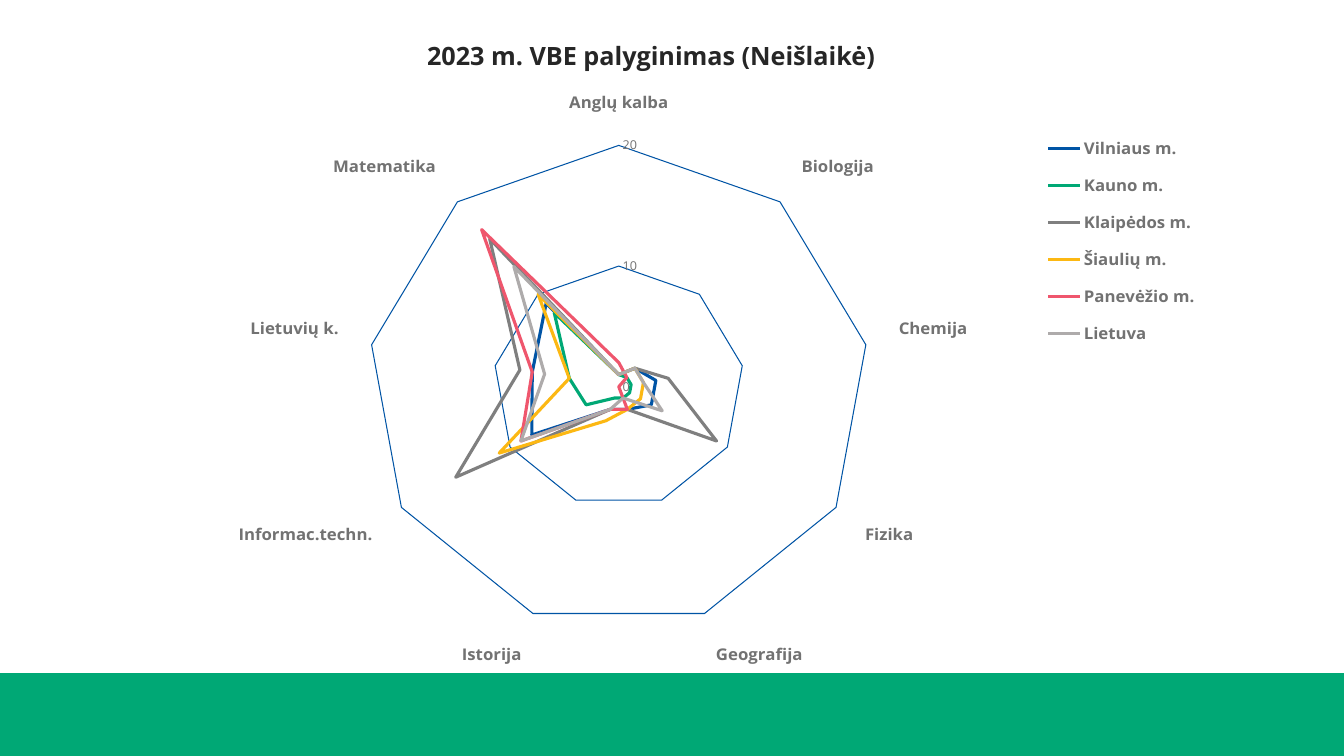
import lxml.etree
import pptx
import pptx.chart.data
import pptx.dml.color
import pptx.enum.chart
import pptx.enum.shapes
import pptx.enum.text
import pptx.util

PX = 914400 / 100.8
FONT = "Open Sans"
CHART_NS = "http://schemas.openxmlformats.org/drawingml/2006/chart"

SUBJECTS = ["Anglų kalba", "Biologija", "Chemija", "Fizika", "Geografija",
            "Istorija", "Informac.techn.", "Lietuvių k.", "Matematika"]
CITIES = [
    ("Vilniaus m.", "0054A5", (1, 2, 3, 3, 2, 2, 8, 7, 9)),
    ("Kauno m.", "00A875", (1, 1, 1, 1, 1, 1, 3, 4, 8)),
    ("Klaipėdos m.", "7F7F7F", (1, 2, 4, 9, 2, 2, 15, 8, 16)),
    ("Šiaulių m.", "FCB813", (1, 2, 2, 2, 2, 3, 11, 4, 10)),
    ("Panevėžio m.", "EF566D", (2, 1, 0, 0, 2, 2, 9, 7, 17)),
    ("Lietuva", "AEABAB", (1, 2, 2, 4, 1, 2, 9, 6, 13)),
]


def px(length):
    return pptx.util.Emu(round(length * PX))


def color(hex_code):
    return pptx.dml.color.RGBColor.from_string(hex_code)


def set_values(target, values):
    for name, value in values.items():
        setattr(target, name, value)


def format_font(font, size, hex_code, bold):
    set_values(font, {"name": FONT, "size": pptx.util.Pt(size), "bold": bold})
    font.color.rgb = color(hex_code)


def format_line(line, hex_code, width):
    line.color.rgb = color(hex_code)
    line.width = pptx.util.Pt(width)


def set_layout(parent, index, fractions, inner=False):
    """Place a chart part by fractions of the chart's width and height."""
    tag = f"{{{CHART_NS}}}"
    for old in parent.findall(tag + "layout"):
        parent.remove(old)
    layout = lxml.etree.Element(tag + "layout")
    manual = lxml.etree.SubElement(layout, tag + "manualLayout")
    settings = [("layoutTarget", "inner")] if inner else []
    settings += [("xMode", "edge"), ("yMode", "edge")]
    settings += zip("xywh", fractions)
    for name, value in settings:
        lxml.etree.SubElement(manual, tag + name).set("val", str(value))
    parent.insert(index, layout)


def add_band(page, box):
    band = page.shapes.add_shape(
        pptx.enum.shapes.MSO_SHAPE.RECTANGLE, *map(px, box))
    band.shadow.inherit = False
    band.fill.solid()
    band.fill.fore_color.rgb = color("00A875")
    band.line.fill.background()


def add_title(page, box, text):
    title = page.shapes.title
    set_values(title, dict(zip(("left", "top", "width", "height"), map(px, box))))
    frame = title.text_frame
    set_values(frame, {
        "word_wrap": False,
        "auto_size": pptx.enum.text.MSO_AUTO_SIZE.SHAPE_TO_FIT_TEXT,
        "vertical_anchor": pptx.enum.text.MSO_ANCHOR.TOP,
    })
    para = frame.paragraphs[0]
    set_values(para, {"alignment": pptx.enum.text.PP_ALIGN.LEFT,
                      "line_spacing": 1.0, "space_before": pptx.util.Pt(0)})
    span = para.add_run()
    span.text = text
    format_font(span.font, 18, "262626", True)


def add_radar(page, box):
    data = pptx.chart.data.CategoryChartData(number_format="0")
    data.categories = SUBJECTS
    for name, _, values in CITIES:
        data.add_series(name, values)
    chart = page.shapes.add_chart(
        pptx.enum.chart.XL_CHART_TYPE.RADAR, *map(px, box), data).chart
    chart.has_title = False
    format_font(chart.font, 10, "262626", False)
    plot = chart.plots[0]
    plot.vary_by_categories = False

    # City lines
    for series, (_, hex_code, _) in zip(plot.series, CITIES):
        format_line(series.format.line, hex_code, 2.25)
        series.marker.style = pptx.enum.chart.XL_MARKER_STYLE.NONE

    # Axes
    subjects, scale = chart.category_axis, chart.value_axis
    for axis, size, bold in ((subjects, 12, True), (scale, 9, False)):
        set_values(axis, {
            "major_tick_mark": pptx.enum.chart.XL_TICK_MARK.NONE,
            "minor_tick_mark": pptx.enum.chart.XL_TICK_MARK.NONE,
        })
        format_font(axis.tick_labels.font, size, "727272", bold)
    subjects.has_major_gridlines = False
    format_line(subjects.format.line, "DEDEDE", 0.75)
    set_values(scale, {"minimum_scale": 0, "maximum_scale": 20,
                       "major_unit": 10, "has_major_gridlines": True})
    set_values(scale.tick_labels, {"number_format": "0",
                                   "number_format_is_linked": False})
    format_line(scale.major_gridlines.format.line, "0054A5", 0.75)
    scale.format.line.fill.background()

    # Legend and plot placement
    chart.has_legend = True
    set_values(chart.legend, {
        "position": pptx.enum.chart.XL_LEGEND_POSITION.TOP,
        "include_in_layout": False,
    })
    format_font(chart.legend.font, 12, "727272", True)
    set_layout(chart.legend._element, 1, (0.83, 0.05, 0.15, 0.43))
    plot_area = chart._chartSpace.chart.plotArea
    set_layout(plot_area, 0, (0.176, 0.092, 0.545, 0.873), inner=True)


def main():
    deck = pptx.Presentation()
    set_values(deck, {"slide_width": px(1344), "slide_height": px(756)})
    page = deck.slides.add_slide(deck.slide_layouts[5])
    page.background.fill.solid()
    page.background.fill.fore_color.rgb = color("FFFFFF")
    add_band(page, (0, 673, 1344, 83))
    add_radar(page, (125, 91, 1101, 575))
    add_title(page, (417, 35, 473, 40), "2023 m. VBE palyginimas (Neišlaikė)")
    deck.save("out.pptx")


if __name__ == "__main__":
    main()
